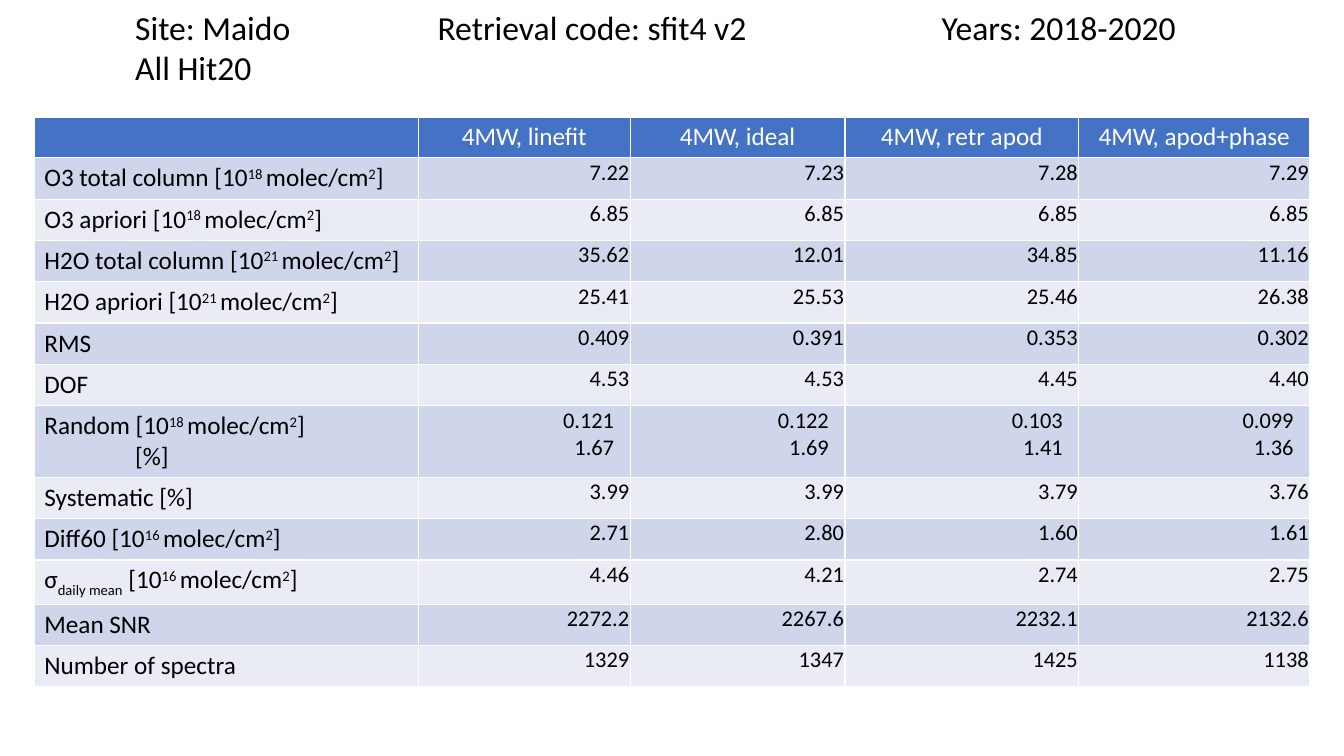
from pptx import Presentation
from pptx.dml.color import RGBColor
from pptx.enum import text
from pptx.oxml import parse_xml
from pptx.oxml.ns import nsdecls
from pptx.util import Inches, Pt

COLORS = {"header": "4472C4", "odd": "CFD5EA", "even": "E9EBF5",
          "white": "FFFFFF", "black": "000000"}
BASELINES = {"^": "30000", "_": "-25000"}

prs = Presentation()
prs.slide_width, prs.slide_height = Inches(13.33), Inches(7.5)
s = prs.slides.add_slide(prs.slide_layouts[5])


def style(p, size, color, align):
    p.font.name, p.font.size, p.font.bold = "Calibri", Pt(size), False
    p.font.color.rgb = RGBColor.from_string(COLORS[color])
    p.alignment = align


def add_runs(p, label):
    """Add runs split at |, where ^ marks superscript and _ subscript."""
    for part in label.split("|"):
        r = p.add_run()
        r.text = part.lstrip("^_")
        if part[:1] in BASELINES:
            r._r.get_or_add_rPr().set("baseline", BASELINES[part[0]])


# Heading: site, code and years on tab stops
title = s.shapes.title
title.left, title.top = Inches(1.24), Inches(0.02)
title.width, title.height = Inches(10.55), Inches(1.31)
tf = title.text_frame
tf.text = "Site: Maido\tRetrieval code: sfit4 v2\tYears: 2018-2020\nAll Hit20"
tf.word_wrap = True
tf.auto_size = text.MSO_AUTO_SIZE.NONE
tf.vertical_anchor = text.MSO_ANCHOR.TOP
for p in tf.paragraphs:
    style(p, 24, "black", text.PP_ALIGN.LEFT)
stops = "".join(f'<a:tab pos="{Inches(x)}" algn="l"/>' for x in (3, 8))
tf.paragraphs[0]._p.get_or_add_pPr().insert_element_before(
    parse_xml(f'<a:tabLst {nsdecls("a")}>{stops}</a:tabLst>'), "a:defRPr", "a:extLst")

# Table contents
UNIT = "|molec/cm|^2|]"
rows = [
    ("", "4MW, linefit", "4MW, ideal", "4MW, retr apod", "4MW, apod+phase"),
    ("O3 total column [10|^18 " + UNIT, "7.22", "7.23", "7.28", "7.29"),
    ("O3 apriori [10|^18 " + UNIT, "6.85", "6.85", "6.85", "6.85"),
    ("H2O total column [10|^21 " + UNIT, "35.62", "12.01", "34.85", "11.16"),
    ("H2O apriori [10|^21 " + UNIT, "25.41", "25.53", "25.46", "26.38"),
    ("RMS", "0.409", "0.391", "0.353", "0.302"),
    ("DOF", "4.53", "4.53", "4.45", "4.40"),
    ("Random [10|^18 " + UNIT + "\n[%]",
     "0.121\n1.67", "0.122\n1.69", "0.103\n1.41", "0.099\n1.36"),
    ("Systematic [%]", "3.99", "3.99", "3.79", "3.76"),
    ("Diff60 [10|^16 " + UNIT, "2.71", "2.80", "1.60", "1.61"),
    ("σ|_daily mean| [10|^16 " + UNIT, "4.46", "4.21", "2.74", "2.75"),
    ("Mean SNR", "2272.2", "2267.6", "2232.1", "2132.6"),
    ("Number of spectra", "1329", "1347", "1425", "1138"),
]
widths = [3.81, 2.1, 2.13, 2.32, 2.29]
heights = [0.37] + [0.7 if "\n" in row[0] else 0.41 for row in rows[1:]]

# Table grid
table = s.shapes.add_table(len(rows), len(widths), Inches(0.34), Inches(1.16),
                           Inches(sum(widths)), Inches(sum(heights))).table
for column, width in zip(table.columns, widths):
    column.width = Inches(width)
for table_row, height in zip(table.rows, heights):
    table_row.height = Inches(height)

# Table cells
for i, row in enumerate(rows):
    band = "header" if i == 0 else "odd" if i % 2 else "even"
    for j, value in enumerate(row):
        cell = table.cell(i, j)
        cell.fill.solid()
        cell.fill.fore_color.rgb = RGBColor.from_string(COLORS[band])
        size, color, align = 18, "black", text.PP_ALIGN.LEFT
        if i == 0:
            color, align = "white", text.PP_ALIGN.CENTER
        elif j > 0:
            size, align = 16, text.PP_ALIGN.RIGHT
            cell.margin_left = cell.margin_top = cell.margin_right = Inches(0.01)
            cell.margin_bottom = 0
        lines = value.split("\n")
        for k, line in enumerate(lines):
            tf = cell.text_frame
            p = tf.add_paragraph() if k else tf.paragraphs[0]
            style(p, size, color, align)
            if line:
                add_runs(p, line)
            # Two-line cells: indent the percent label and the absolute values
            if len(lines) > 1 and j == 0 and k == 1:
                p._p.get_or_add_pPr().set("marL", str(Inches(0.9)))
            elif len(lines) > 1 and j > 0 and k == 0:
                p._p.get_or_add_pPr().set("marR", str(Inches(0.15)))

prs.save("out.pptx")
